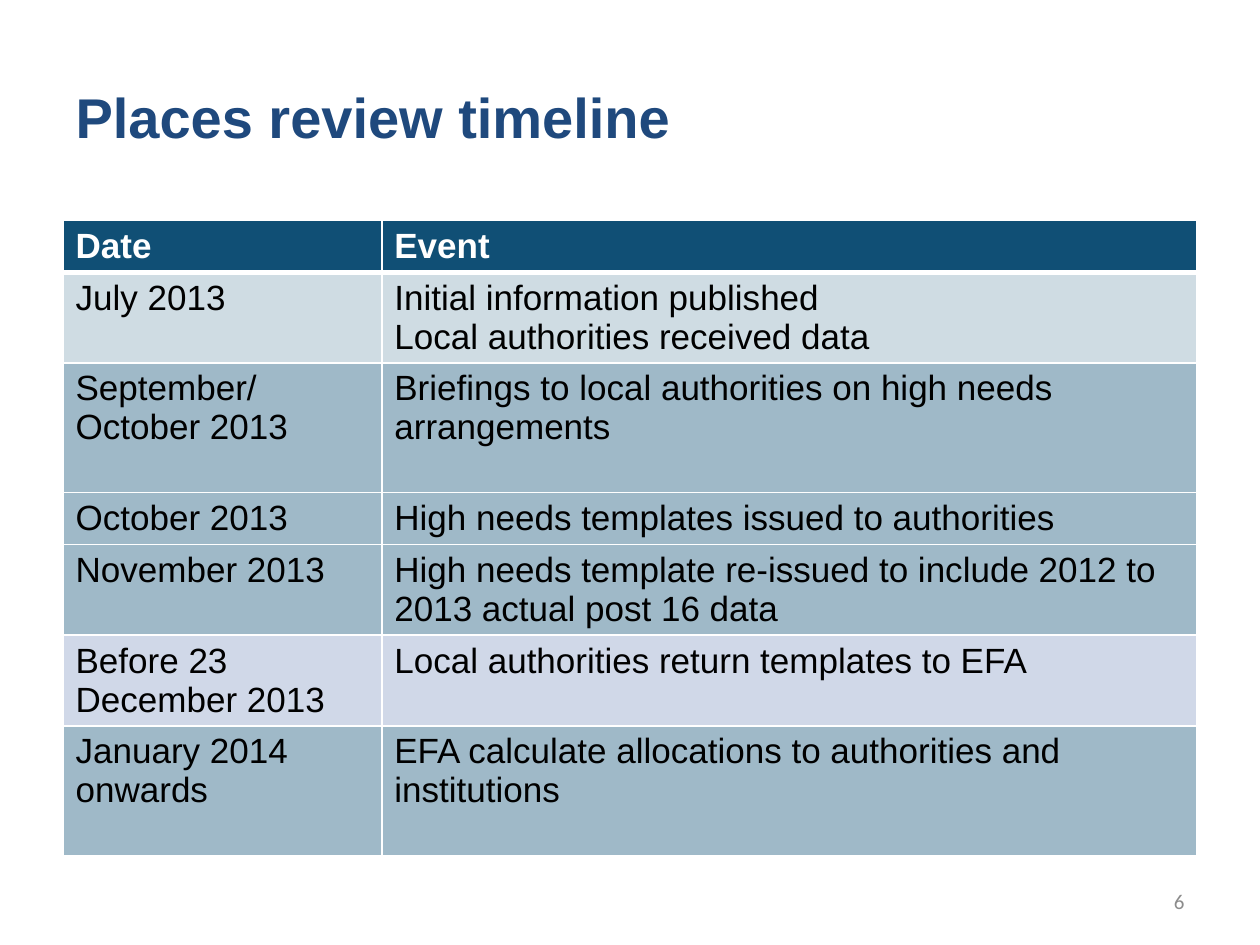
"""Build the places review timeline slide."""
from lxml import etree
from pptx import Presentation
from pptx.dml.color import RGBColor
from pptx.enum.text import MSO_ANCHOR, PP_ALIGN
from pptx.oxml.ns import qn
from pptx.util import Inches, Pt

MIDDLE = MSO_ANCHOR.MIDDLE
LEFT, RIGHT = PP_ALIGN.LEFT, PP_ALIGN.RIGHT
COLORS = {
    "title": "1F497D", "head": "104F75", "pale": "CFDCE3", "mid": "9FB9C8",
    "lilac": "D0D8E8", "white": "FFFFFF", "black": "000000", "gray": "8C8C8C",
}
WIDTHS = (2.53, 6.47)
ROWS = (
    (0.41, "head", "Date", "Event"),
    (0.72, "pale", "July 2013",
     "Initial information published\nLocal authorities received data"),
    (1.03, "mid", "September/ October 2013",
     "Briefings to local authorities on high needs arrangements"),
    (0.41, "mid", "October 2013", "High needs templates issued to authorities"),
    (0.72, "mid", "November 2013",
     "High needs template re-issued to include 2012 to 2013 actual post 16 data"),
    (0.72, "lilac", "Before 23 December 2013",
     "Local authorities return templates to EFA"),
    (1.03, "mid", "January 2014 onwards",
     "EFA calculate allocations to authorities and institutions"),
)


def color(name):
    return RGBColor.from_string(COLORS[name])


def write(frame, text, size, tint, bold=False, face="Arial", align=LEFT):
    frame.text = text
    for para in frame.paragraphs:
        para.alignment = align
        for run in para.runs:
            font = run.font
            font.name, font.size, font.bold = face, Pt(size), bold
            font.color.rgb = color(tint)


def place(shape, left, top, width, height):
    shape.left, shape.top = Inches(left), Inches(top)
    shape.width, shape.height = Inches(width), Inches(height)


def border(cell, side, width):
    props = cell._tc.get_or_add_tcPr()
    line = etree.SubElement(props, qn(f"a:ln{side}"), w=str(Pt(width)))
    fill = etree.SubElement(line, qn("a:solidFill"))
    etree.SubElement(fill, qn("a:srgbClr"), val=COLORS["white"])


def add_title(slide):
    title = slide.shapes.title
    place(title, 0.5, 0.3, 9, 1.25)
    write(title.text_frame, "Places review timeline", 32, "title", bold=True)
    title.text_frame.vertical_anchor = MIDDLE


def add_dates(slide):
    total = sum(row[0] for row in ROWS)
    table = slide.shapes.add_table(
        len(ROWS), len(WIDTHS), Inches(0.5), Inches(1.75),
        Inches(sum(WIDTHS)), Inches(total)).table
    for column, width in zip(table.columns, WIDTHS):
        column.width = Inches(width)
    for i, (height, tint, *texts) in enumerate(ROWS):
        table.rows[i].height = Inches(height)
        head = i == 0
        for cell, text in zip(table.rows[i].cells, texts):
            for side in "LRTB":
                thick = (head and side == "B") or (i == 1 and side == "T")
                border(cell, side, 3 if thick else 1)
            cell.fill.solid()
            cell.fill.fore_color.rgb = color(tint)
            write(cell.text_frame, text, 20, "white" if head else "black", head)


def add_number(slide):
    box = slide.shapes.add_textbox(
        Inches(7.17), Inches(6.95), Inches(2.33), Inches(0.4))
    frame = box.text_frame
    frame.word_wrap = True
    frame.vertical_anchor = MIDDLE
    write(frame, "6", 12, "gray", face="Calibri", align=RIGHT)


def main():
    deck = Presentation()
    deck.slide_width, deck.slide_height = Inches(10), Inches(7.5)
    slide = deck.slides.add_slide(deck.slide_layouts[5])
    add_title(slide)
    add_dates(slide)
    add_number(slide)
    deck.save("out.pptx")


if __name__ == "__main__":
    main()
